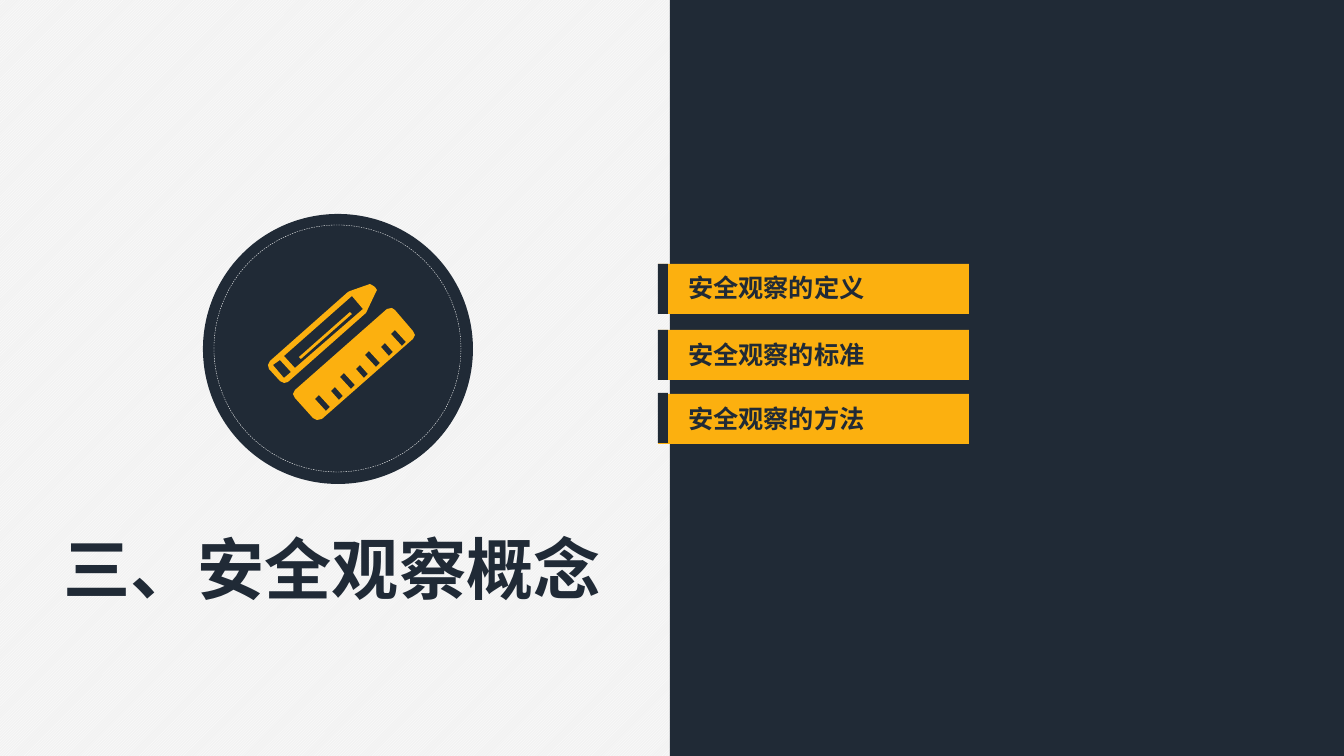
from dataclasses import dataclass

from lxml import etree
from pptx import Presentation
from pptx.dml.color import RGBColor
from pptx.enum.dml import MSO_LINE, MSO_PATTERN
from pptx.enum.shapes import MSO_SHAPE
from pptx.enum.text import MSO_ANCHOR, MSO_AUTO_SIZE, PP_ALIGN
from pptx.oxml.ns import qn
from pptx.util import Emu, Pt

RECTANGLE, OVAL = MSO_SHAPE.RECTANGLE, MSO_SHAPE.OVAL
LEFT, CENTER = PP_ALIGN.LEFT, PP_ALIGN.CENTER
TOP, MIDDLE = MSO_ANCHOR.TOP, MSO_ANCHOR.MIDDLE
NO_AUTOFIT = MSO_AUTO_SIZE.NONE
DASH = MSO_LINE.DASH
STRIPES = MSO_PATTERN.LIGHT_UPWARD_DIAGONAL

EMU_PER_PX = 914400 / 100.8
FONT = "Noto Sans CJK SC"
NAVY, AMBER, WHITE, PALE = "202A36", "FCB00F", "FFFFFF", "F2F2F2"

Outline = list[tuple[int, int]]


@dataclass
class Topic:
    text: str
    bar_top: int
    accent_top: int
    gap_before: int


TOPICS = [
    Topic("安全观察的定义", 264, 264, 0),
    Topic("安全观察的标准", 330, 330, 37),
    Topic("安全观察的方法", 394, 393, 34),
]

# Pencil and ruler outlines, in px on the slide
PENCIL: list[Outline] = [
    [(280, 381), (269, 369), (268, 365), (270, 361), (348, 292), (350, 291),
     (370, 284), (372, 285), (375, 287), (377, 290), (376, 292), (367, 311),
     (366, 313), (288, 382), (284, 383)],
    [(363, 309), (352, 296), (284, 356), (295, 368)],
    [(291, 372), (280, 360), (273, 365), (284, 378)],
    [(301, 359), (299, 357), (350, 312), (352, 314)],
]
RULER: Outline = [
    (313, 418), (295, 398), (293, 394), (295, 390), (387, 309), (392, 308),
    (395, 310), (413, 331), (415, 335), (413, 339), (322, 419), (317, 420),
]
TICK_COUNT = 7


def px(length: float) -> Emu:
    return Emu(round(length * EMU_PER_PX))


def color(value: str) -> RGBColor:
    return RGBColor.from_string(value)


def paint(shape, fill: str | None) -> None:
    shape.shadow.inherit = False
    shape.line.fill.background()
    if fill:
        shape.fill.solid()
        shape.fill.fore_color.rgb = color(fill)
    else:
        shape.fill.background()


def add_block(slide, kind, left: int, top: int, width: int, height: int,
              fill: str | None = None):
    shape = slide.shapes.add_shape(kind, px(left), px(top), px(width), px(height))
    paint(shape, fill)
    return shape


def place(slide, shape, left: int, top: int, width: int, height: int, anchor) -> None:
    """Position a placeholder and bring it to the front."""
    shape.left, shape.top = px(left), px(top)
    shape.width, shape.height = px(width), px(height)
    frame = shape.text_frame
    frame.word_wrap = True
    frame.auto_size = NO_AUTOFIT
    frame.vertical_anchor = anchor
    slide.shapes._spTree.append(shape._element)


def write(paragraph, text: str, *, size: int, align=LEFT, gap_before: int = 0) -> None:
    paragraph.alignment = align
    paragraph.space_before = px(gap_before)
    properties = paragraph._p.get_or_add_pPr()
    properties.set("marL", "0")
    properties.set("indent", "0")
    etree.SubElement(properties, qn("a:buNone"))
    run = paragraph.add_run()
    run.text = text
    run.font.size = Pt(size)
    run.font.bold = True
    run.font.color.rgb = color(NAVY)
    run.font.name = FONT
    etree.SubElement(run._r.get_or_add_rPr(), qn("a:ea")).set("typeface", FONT)


def ruler_tick(index: int) -> Outline:
    """Ticks step along the ruler edge, alternately long and short."""
    x, y = round(326 + 12.6 * index), round(411 - 10.9 * index)
    depth_x, depth_y = (8, 9) if index % 2 else (11, 12)
    return [(x, y), (x + 4, y - 4),
            (x + 4 - depth_x, y - 4 - depth_y), (x - depth_x, y - depth_y)]


def add_icon(slide, outlines: list[Outline], fill: str) -> None:
    first, *others = outlines
    builder = slide.shapes.build_freeform(*first[0], scale=EMU_PER_PX)
    builder.add_line_segments(first[1:], close=True)
    for outline in others:
        builder.move_to(*outline[0])
        builder.add_line_segments(outline[1:], close=True)
    paint(builder.convert_to_shape(), fill)


def main() -> None:
    presentation = Presentation()
    presentation.slide_width, presentation.slide_height = px(1344), px(756)
    slide = presentation.slides.add_slide(presentation.slide_layouts[1])
    title, body = slide.placeholders

    # Striped background and dark right half
    background = slide.background.fill
    background.patterned()
    background.pattern = STRIPES
    background.fore_color.rgb = color(WHITE)
    background.back_color.rgb = color(PALE)
    add_block(slide, RECTANGLE, 670, 0, 674, 756, NAVY)

    # Topic bars with their accents
    for topic in TOPICS:
        add_block(slide, RECTANGLE, 658, topic.bar_top, 311, 50, AMBER)
        add_block(slide, RECTANGLE, 658, topic.accent_top, 10, 50, NAVY)

    # Badge
    add_block(slide, OVAL, 203, 214, 270, 270, NAVY)
    ring = add_block(slide, OVAL, 214, 225, 247, 247)
    ring.line.color.rgb = color(WHITE)
    ring.line.width = Pt(0.25)
    ring.line.dash_style = DASH
    ticks = [ruler_tick(index) for index in range(TICK_COUNT)]
    add_icon(slide, [*PENCIL, RULER, *ticks], AMBER)

    # Topic list
    place(slide, body, 678, 267, 280, 180, TOP)
    for index, topic in enumerate(TOPICS):
        frame = body.text_frame
        paragraph = frame.add_paragraph() if index else frame.paragraphs[0]
        write(paragraph, topic.text, size=18, gap_before=topic.gap_before)

    # Section title
    place(slide, title, 40, 514, 584, 107, MIDDLE)
    write(title.text_frame.paragraphs[0], "三、安全观察概念", size=48, align=CENTER)

    presentation.save("out.pptx")


if __name__ == "__main__":
    main()
